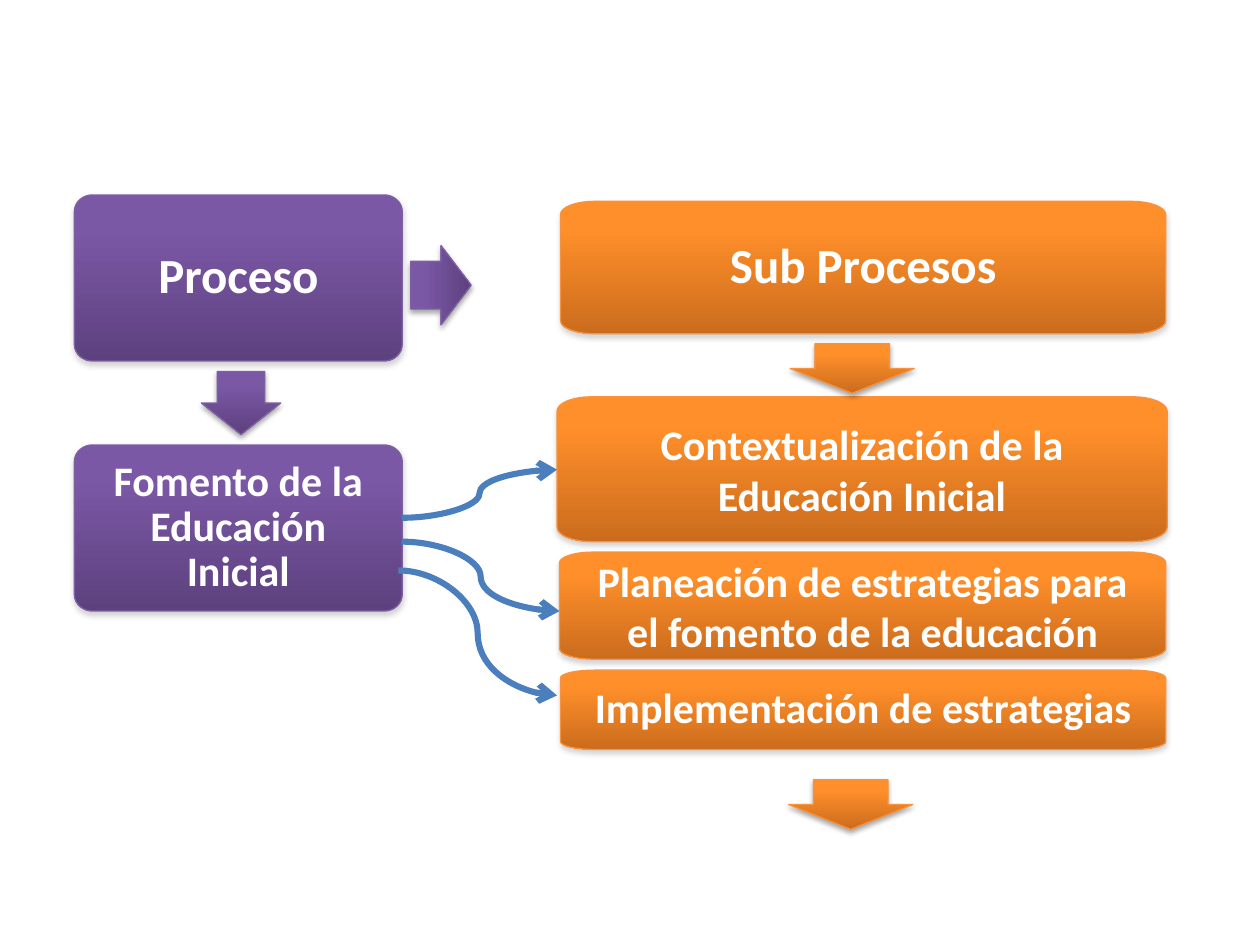
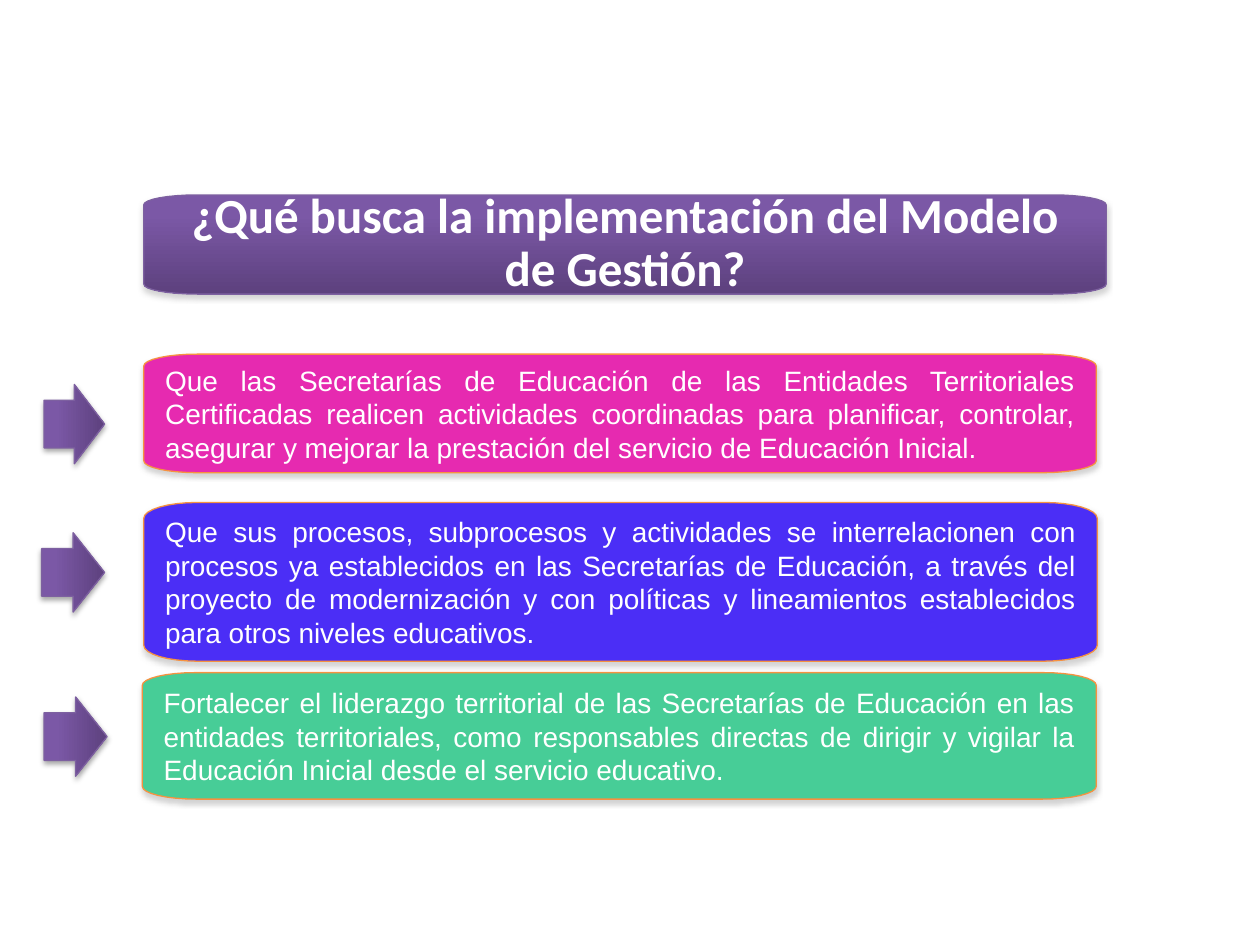
from math import cos, radians, sin

from pptx import Presentation
from pptx.dml.color import RGBColor
from pptx.enum.shapes import MSO_CONNECTOR, MSO_SHAPE
from pptx.enum.text import MSO_ANCHOR, PP_ALIGN
from pptx.oxml import parse_xml
from pptx.oxml.ns import nsdecls, qn
from pptx.util import Cm, Pt

WHITE = RGBColor(0xFF, 0xFF, 0xFF)
PURPLE = RGBColor(0x7B, 0x58, 0xA6)
PLUM = RGBColor(0x5D, 0x41, 0x7E)
VIOLET = RGBColor(0x7D, 0x60, 0xA0)
ORANGE = RGBColor(0xFF, 0x8F, 0x2A)
RUST = RGBColor(0xCB, 0x6C, 0x1D)
AMBER = RGBColor(0xF6, 0x92, 0x40)
PINK = RGBColor(0xE6, 0x2A, 0xB0)
INDIGO = RGBColor(0x4B, 0x2E, 0xF6)
GREEN = RGBColor(0x47, 0xCD, 0x97)
BLUE = RGBColor(0x4B, 0x7E, 0xBC)
GREY = RGBColor(0x80, 0x80, 0x80)
BLACK = RGBColor(0, 0, 0)

GRAPE = {"fill": (PURPLE, PLUM), "edge": VIOLET}
FLAME = {"fill": (ORANGE, RUST), "edge": AMBER}

BOLD = {"name": "Calibri", "bold": True, "color": WHITE}
HEAD = {"font": {**BOLD, "size": Pt(28)},
        "para": {"alignment": PP_ALIGN.CENTER, "line_spacing": 0.9}}
TIGHT = {"font": {**BOLD, "size": Pt(24)}, "para": HEAD["para"]}
LOOSE = {"font": TIGHT["font"],
         "para": {"alignment": PP_ALIGN.CENTER, "line_spacing": 1.0}}
BODY = {"font": {"name": "Arial", "size": Pt(16), "color": WHITE},
        "para": {"alignment": PP_ALIGN.JUSTIFY}}
FRAME = {"word_wrap": True, "vertical_anchor": MSO_ANCHOR.MIDDLE,
         "margin_left": Cm(0.43), "margin_right": Cm(0.43),
         "margin_top": Cm(0.43), "margin_bottom": Cm(0.43)}


def paint(shape, fill, edge, shade, angle=270):
    if len(fill) == 1:
        shape.fill.solid()
        shape.fill.fore_color.rgb = fill[0]
    else:
        shape.fill.gradient()
        shape.fill.gradient_angle = angle
        for stop, color, place in zip(shape.fill.gradient_stops, fill, (0.2, 1)):
            stop.color.rgb = color
            stop.position = place
    shape.line.color.rgb = edge
    shape.line.width = Pt(0.75)
    shape.shadow.inherit = False
    shape.element.spPr.find(qn("a:effectLst")).append(parse_xml(
        f'<a:outerShdw {nsdecls("a")} blurRad="{Pt(3.1)}" dist="{Pt(1.8)}" '
        f'dir="5400000" rotWithShape="0"><a:srgbClr val="{shade}">'
        '<a:alpha val="35000"/></a:srgbClr></a:outerShdw>'))


def panel(slide, text, place, look, style):
    left, top, wide, high = place
    bend, drop = wide * 0.056, high * 0.1
    dots = []
    for turn in range(4):
        midx = left + wide - bend if turn in (0, 3) else left + bend
        midy = top + high - drop if turn in (0, 1) else top + drop
        for step in range(9):
            arc = radians(90 * turn + 11.25 * step)
            dots.append((Cm(midx + bend * cos(arc)), Cm(midy + drop * sin(arc))))
    pen = slide.shapes.build_freeform(*dots[0])
    pen.add_line_segments(dots[1:], close=True)
    shape = pen.convert_to_shape()
    paint(shape, **look, shade=GREY)
    frame = shape.text_frame
    for key, value in FRAME.items():
        setattr(frame, key, value)
    para = frame.paragraphs[0]
    for key, value in style["para"].items():
        setattr(para, key, value)
    run = para.add_run()
    run.text = text
    for key, value in style["font"].items():
        if key == "color":
            run.font.color.rgb = value
        else:
            setattr(run.font, key, value)


deck = Presentation()
deck.slide_width, deck.slide_height = Cm(25.4), Cm(19.05)
blank = deck.slide_layouts[6]
flow = deck.slides.add_slide(blank)
goals = deck.slides.add_slide(blank)

panels = [
    (flow, "Proceso", (1.5, 3.93, 6.61, 3.35), GRAPE, HEAD),
    (flow, "Fomento de la Educación Inicial", (1.5, 8.97, 6.61, 3.35), GRAPE, TIGHT),
    (flow, "Sub Procesos", (11.3, 4.06, 12.2, 2.67), FLAME, HEAD),
    (flow, "Contextualización de la Educación Inicial", (11.23, 8, 12.3, 2.92), FLAME, LOOSE),
    (flow, "Planeación de estrategias para el fomento de la educación",
     (11.28, 11.13, 12.22, 2.16), FLAME, LOOSE),
    (flow, "Implementación de estrategias", (11.3, 13.51, 12.2, 1.6), FLAME, TIGHT),
    (goals, "¿Qué busca la implementación del Modelo de Gestión?",
     (2.9, 3.93, 19.4, 2), GRAPE, HEAD),
    (goals, "Que las Secretarías de Educación de las Entidades Territoriales "
     "Certificadas realicen actividades coordinadas para planificar, controlar, "
     "asegurar y mejorar la prestación del servicio de Educación Inicial.",
     (2.9, 7.14, 19.2, 2.39), {"fill": (PINK,), "edge": AMBER}, BODY),
    (goals, "Que sus procesos, subprocesos y actividades se interrelacionen con "
     "procesos ya establecidos en las Secretarías de Educación, a través del "
     "proyecto de modernización y con políticas y lineamientos establecidos "
     "para otros niveles educativos.",
     (2.9, 10.13, 19.22, 3.2), {"fill": (INDIGO,), "edge": AMBER}, BODY),
    (goals, "Fortalecer el liderazgo territorial de las Secretarías de Educación "
     "en las entidades territoriales, como responsables directas de dirigir y "
     "vigilar la Educación Inicial desde el servicio educativo.",
     (2.87, 13.56, 19.23, 2.55), {"fill": (GREEN,), "edge": AMBER}, BODY),
]
for item in panels:
    panel(*item)

DOWN = (MSO_SHAPE.DOWN_ARROW, 270)
RIGHT = (MSO_SHAPE.RIGHT_ARROW, 0)
arrows = [
    (flow, DOWN, GRAPE, (4.06, 7.49, 1.6, 1.27)),
    (flow, RIGHT, GRAPE, (8.28, 4.95, 1.22, 1.6)),
    (flow, DOWN, FLAME, (15.93, 6.93, 2.5, 1)),
    (flow, DOWN, FLAME, (15.9, 15.72, 2.5, 1)),
    (goals, RIGHT, GRAPE, (0.89, 7.75, 1.22, 1.6)),
    (goals, RIGHT, GRAPE, (0.84, 10.74, 1.27, 1.6)),
    (goals, RIGHT, GRAPE, (0.89, 14.05, 1.27, 1.6)),
]
for slide, (kind, angle), look, place in arrows:
    arrow = slide.shapes.add_shape(kind, *map(Cm, place))
    arrow.adjustments[0] = 0.6
    paint(arrow, **look, shade=BLACK, angle=angle)

curves = [
    (8.1, 10.44, 11.23, 9.47),
    (8.1, 10.92, 11.28, 12.32),
    (8.03, 11.5, 11.23, 14.02),
]
for ends in curves:
    curve = flow.shapes.add_connector(MSO_CONNECTOR.CURVE, *map(Cm, ends))
    curve.line.color.rgb = BLUE
    curve.line.width = Pt(3.5)
    props = curve.element.spPr
    props.find(qn("a:ln")).append(parse_xml(f'<a:tailEnd {nsdecls("a")} type="arrow"/>'))
    props.append(parse_xml(f'<a:effectLst {nsdecls("a")}/>'))

deck.save("out.pptx")
